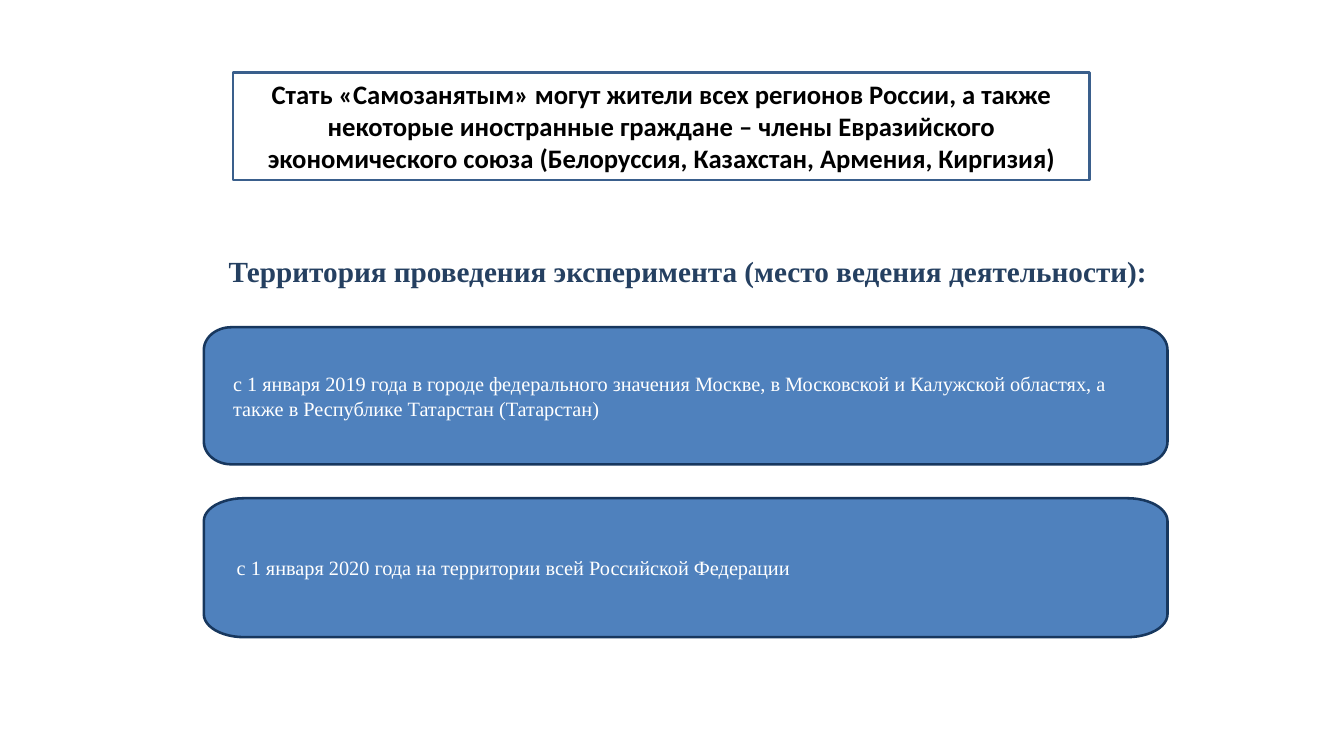
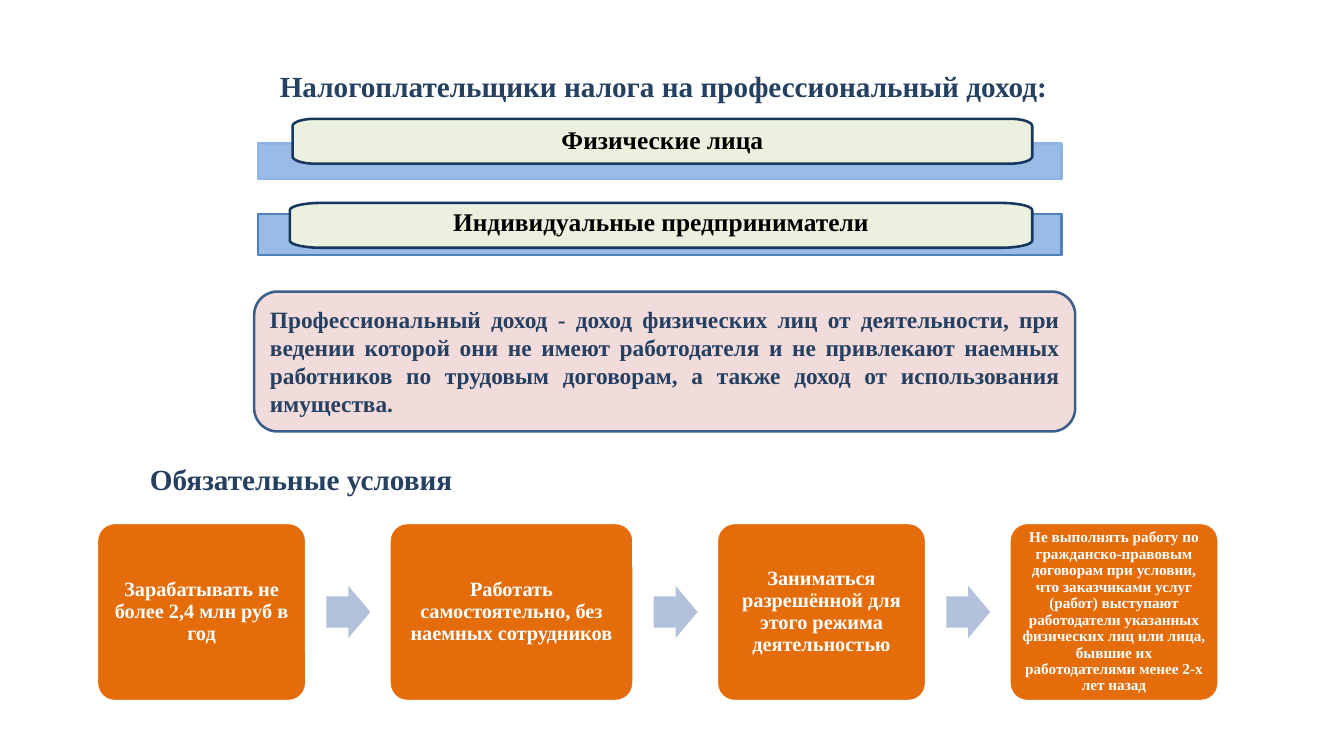
from math import cos, pi, sin

from lxml import etree
from pptx import Presentation
from pptx.dml.color import RGBColor
from pptx.enum.shapes import MSO_SHAPE
from pptx.enum.text import MSO_ANCHOR, MSO_AUTO_SIZE, PP_ALIGN
from pptx.oxml.ns import qn
from pptx.util import Inches, Pt

RECTANGLE = MSO_SHAPE.RECTANGLE
ROUNDED = MSO_SHAPE.ROUNDED_RECTANGLE
ARROW = MSO_SHAPE.RIGHT_ARROW
LEFT, CENTER, JUSTIFY = PP_ALIGN.LEFT, PP_ALIGN.CENTER, PP_ALIGN.JUSTIFY
MIDDLE = MSO_ANCHOR.MIDDLE
NO_AUTOFIT = MSO_AUTO_SIZE.NONE
TITLE_ONLY = 5

SERIF, SANS = "Times New Roman", "Calibri"
NAVY, DARK_BLUE, BORDER_BLUE = "254061", "17375E", "3A5F8C"
BLUE, LIGHT_BLUE, ARROW_BLUE = "4F81BD", "8EB4E3", "B3C1DB"
GREEN, PINK, ORANGE = "EBF1DE", "F2DCDB", "E46C0A"
WHITE, BLACK = "FFFFFF", "000000"


def color(hex_string):
    return RGBColor.from_string(hex_string)


class Deck:
    """Holds the shared style and the slide being built."""

    def __init__(self):
        self.presentation = Presentation()
        self.presentation.slide_width = Inches(14.7)
        self.presentation.slide_height = Inches(8.27)
        self.slide = None

    def new_slide(self):
        layout = self.presentation.slide_layouts[TITLE_ONLY]
        self.slide = self.presentation.slides.add_slide(layout)

    def set_text(self, shape, text, size, ink, bold=False, font=SERIF,
                 align=LEFT, spacing=1.0, insets=(0.1, 0.05)):
        frame = shape.text_frame
        frame.word_wrap = True
        frame.auto_size = NO_AUTOFIT
        frame.vertical_anchor = MIDDLE
        frame.margin_left = frame.margin_right = Inches(insets[0])
        frame.margin_top = frame.margin_bottom = Inches(insets[1])
        frame.text = text
        paragraph = frame.paragraphs[0]
        paragraph.alignment = align
        paragraph.line_spacing = spacing
        paragraph.font.name = font
        paragraph.font.size = Pt(size)
        paragraph.font.bold = bold
        paragraph.font.color.rgb = color(ink)

    def paint(self, shape, fill=None, line=None, opacity=100):
        shape.shadow.inherit = False
        if fill:
            shape.fill.solid()
            shape.fill.fore_color.rgb = color(fill)
        else:
            shape.fill.background()
        if opacity < 100:
            solid = shape.element.spPr.find(qn("a:solidFill"))
            alpha = etree.SubElement(solid[0], qn("a:alpha"))
            alpha.set("val", str(opacity * 1000))
        if line:
            shape.line.color.rgb = color(line)
            shape.line.width = Pt(2)
        else:
            shape.line.fill.background()

    def title(self, text, left, top, width):
        self.place_heading(self.slide.shapes.title, text, left, top, width)

    def heading(self, text, left, top, width):
        shape = self.slide.shapes.add_textbox(0, 0, 0, 0)
        self.place_heading(shape, text, left, top, width)

    def place_heading(self, shape, text, left, top, width):
        shape.left, shape.top = Inches(left), Inches(top)
        shape.width, shape.height = Inches(width), Inches(0.52)
        self.set_text(shape, text, 23, NAVY, bold=True, insets=(0.11, 0.06))

    def block(self, kind, left, top, width, height, adjustments=(), **style):
        shape = self.slide.shapes.add_shape(
            kind, Inches(left), Inches(top), Inches(width), Inches(height))
        for index, value in enumerate(adjustments):
            shape.adjustments[index] = value
        self.paint(shape, **style)
        return shape

    def plaque(self, left, top, width, height, radius_x, radius_y, fill):
        """Rectangle whose corners are quarter ellipses."""
        right, bottom = left + width - radius_x, top + height - radius_y
        corners = ((left + radius_x, top + radius_y), (right, top + radius_y),
                   (right, bottom), (left + radius_x, bottom))
        steps = 12
        points = []
        for corner, (center_x, center_y) in enumerate(corners):
            for step in range(steps + 1):
                angle = pi + (corner + step / steps) * pi / 2
                points.append((Inches(center_x + radius_x * cos(angle)),
                               Inches(center_y + radius_y * sin(angle))))
        builder = self.slide.shapes.build_freeform(*points[0])
        builder.add_line_segments(points[1:], close=True)
        shape = builder.convert_to_shape()
        self.paint(shape, fill, DARK_BLUE)
        return shape


def build_territory(deck):
    deck.new_slide()
    deck.title("Территория проведения эксперимента (место ведения деятельности):",
               2.39, 2.7, 11)

    # Who may register
    box = deck.block(RECTANGLE, 2.55, 0.79, 9.37, 1.18, line=BORDER_BLUE)
    deck.set_text(box, "Стать «Самозанятым» могут жители всех регионов России, а также "
                  "некоторые иностранные граждане – члены Евразийского экономического "
                  "союза (Белоруссия, Казахстан, Армения, Киргизия)",
                  21, BLACK, bold=True, font=SANS, align=CENTER)

    # Stages of the experiment
    stages = (
        (3.58, 1.5, 0.3, (0.32, 0.06),
         "с 1 января 2019 года в городе федерального значения Москве, в Московской "
         "и Калужской областях, а также в Республике Татарстан (Татарстан)"),
        (5.45, 1.52, 0.44, (0.36, 0.1),
         "с 1 января 2020 года на территории всей Российской Федерации"),
    )
    for top, height, radius_x, insets, text in stages:
        stage = deck.plaque(2.23, top, 10.54, height, radius_x, 0.25, BLUE)
        deck.set_text(stage, text, 16, WHITE, insets=insets)


def build_taxpayers(deck):
    deck.new_slide()
    deck.title("Налогоплательщики налога на профессиональный доход:", 2.95, 0.68, 9)

    # Taxpayer groups: a bar with a plaque over it
    groups = (
        ("Физические лица", 1.57, 0.39, LIGHT_BLUE, 3.2, 1.3, 0.24, 0.9, (0.32, 0.06)),
        ("Индивидуальные предприниматели", 2.34, 0.45, BLUE, 3.17, 2.22, 0.34, 0.7,
         (0.36, 0.1)),
    )
    for text, bar_top, bar_height, line, left, top, radius_x, spacing, insets in groups:
        deck.block(RECTANGLE, 2.82, bar_top, 8.79, bar_height,
                   fill=LIGHT_BLUE, line=line, opacity=90)
        plaque = deck.plaque(left, top, 11.29 - left, 0.49, radius_x, 0.08, GREEN)
        deck.set_text(plaque, text, 20, BLACK, bold=True, align=CENTER,
                      spacing=spacing, insets=insets)

    # Definition
    definition = deck.block(ROUNDED, 2.78, 3.19, 8.98, 1.53, fill=PINK, line=BORDER_BLUE)
    deck.set_text(definition, "Профессиональный доход - доход физических лиц от "
                  "деятельности, при ведении которой они не имеют работодателя и не "
                  "привлекают наемных работников по трудовым договорам, а также доход "
                  "от использования имущества.", 18.4, NAVY, bold=True, align=JUSTIFY)

    # Conditions: cards joined by block arrows
    deck.heading("Обязательные условия", 1.53, 4.98, 4)
    conditions = (
        (2.29, 16, 0.07, "Зарабатывать не более 2,4 млн руб в год"),
        (2.67, 16, 0.07, "Работать самостоятельно, без наемных сотрудников"),
        (2.29, 16, 0.07, "Заниматься разрешённой для этого режима деятельностью"),
        (2.29, 12, 0.05, "Не выполнять работу по гражданско-правовым договорам при "
         "условии, что заказчиками услуг (работ) выступают работодатели указанных "
         "физических лиц или лица, бывшие их работодателями менее 2-х лет назад"),
    )
    left, gap = 1.06, 0.91
    for index, (width, size, inset, text) in enumerate(conditions):
        if index:
            deck.block(ARROW, left - gap + 0.22, 6.41, 0.48, 0.57, (0.6, 0.5),
                       fill=ARROW_BLUE)
        card = deck.block(ROUNDED, left, 5.72, width, 1.95, (0.1,),
                          fill=ORANGE, line=WHITE)
        deck.set_text(card, text, size, WHITE, bold=True, align=CENTER,
                      spacing=0.9, insets=(inset, inset))
        left += width + gap


def main():
    deck = Deck()
    build_territory(deck)
    build_taxpayers(deck)
    deck.presentation.save("out.pptx")


if __name__ == "__main__":
    main()
